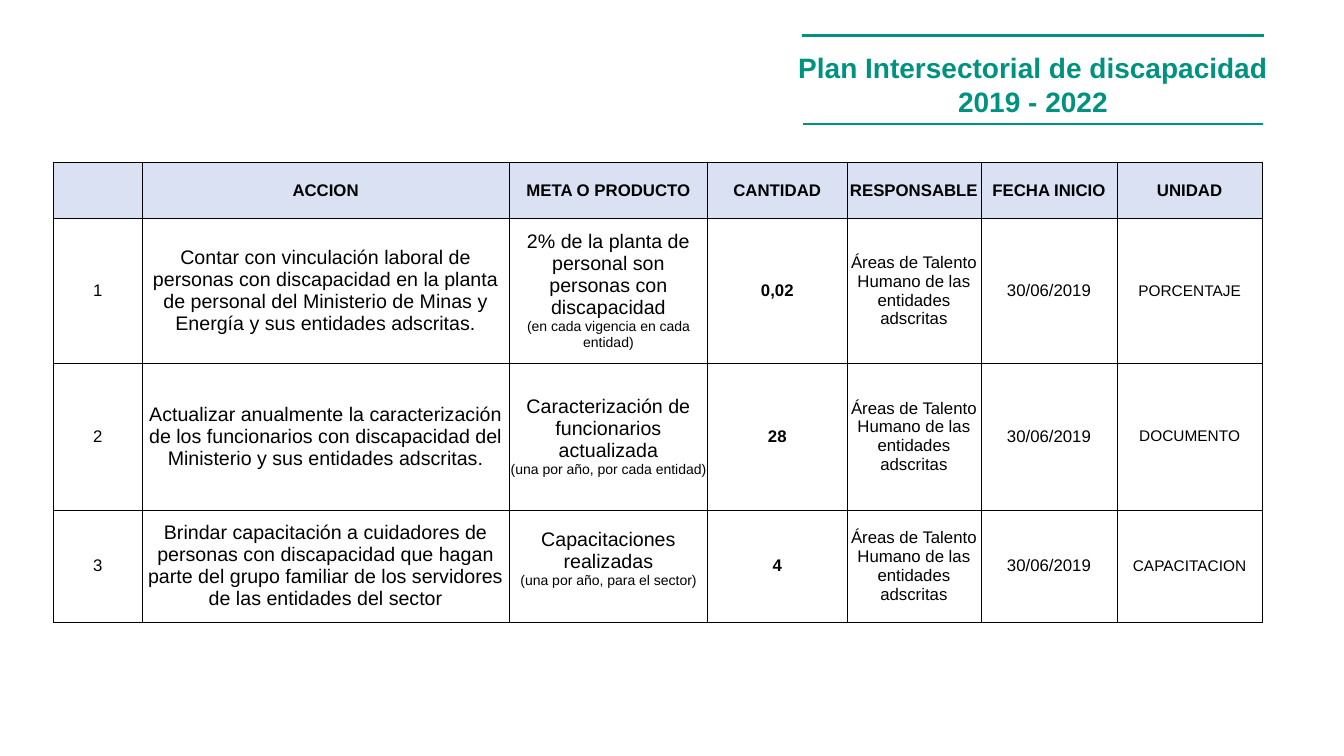
import pptx
import pptx.util
import pptx.dml.color
import pptx.enum.shapes
import pptx.enum.text
import pptx.oxml
import pptx.oxml.ns
from lxml import etree

COLORS = {"title": "009280", "header": "D9E1F2", "text": "000000"}
FONT = "Arial"
TITLE = ["Plan Intersectorial de discapacidad", "2019 - 2022"]
TITLE_BOX = (7.8, 0.45, 4.89, 0.77)
RULES = [(7.95, 12.54, 0.35), (7.96, 12.53, 1.23)]

HEADERS = ["", "ACCION", "META O PRODUCTO", "CANTIDAD", "RESPONSABLE", "FECHA INICIO", "UNIDAD"]
TEAM = "Áreas de Talento Humano de las entidades adscritas"
START = "30/06/2019"
ACTIONS = [
    ("Contar con vinculación laboral de personas con discapacidad en la planta de personal "
     "del Ministerio de Minas y Energía y sus entidades adscritas.",
     ["2% de la planta de personal son personas con discapacidad",
      "(en cada vigencia en cada entidad)"], "0,02", "PORCENTAJE"),
    ("Actualizar anualmente la caracterización de los funcionarios con discapacidad "
     "del Ministerio y sus entidades adscritas.",
     ["Caracterización de funcionarios actualizada",
      "(una por año, por cada entidad)"], "28", "DOCUMENTO"),
    ("Brindar capacitación a cuidadores de personas con discapacidad que hagan parte "
     "del grupo familiar de los servidores de las entidades del sector",
     ["Capacitaciones realizadas",
      "(una por año, para el sector)"], "4", "CAPACITACION"),
]
TABLE_LEFT, TABLE_TOP = 0.53, 1.61
COLS = [0.88, 3.64, 1.97, 1.38, 1.33, 1.35, 1.44]
ROWS = [0.56, 1.43, 1.46, 1.11]
SIZES = [[12], [14], [14, 10], [12], [12], [12], [11]]
QUANTITY_COL, GOAL_COL = 3, 2

inch = pptx.util.Inches


def rgb(name):
    return pptx.dml.color.RGBColor.from_string(COLORS[name])


def write(tf, lines, sizes, color="text", bold=False):
    for i, line in enumerate(lines):
        p = tf.paragraphs[0] if i == 0 else tf.add_paragraph()
        p.alignment = pptx.enum.text.PP_ALIGN.CENTER
        p.space_before = pptx.util.Pt(0)
        r = p.add_run()
        r.text = line
        r.font.name = FONT
        r.font.size = pptx.util.Pt(sizes[min(i, len(sizes) - 1)])
        r.font.bold = bold
        r.font.color.rgb = rgb(color)


def add_borders(cell, top_width):
    tc_pr = cell._tc.get_or_add_tcPr()
    for side, width in (("L", 0.5), ("R", 0.5), ("T", top_width), ("B", 0.5)):
        tc_pr.append(pptx.oxml.parse_xml(
            f'<a:ln{side} {pptx.oxml.ns.nsdecls("a")} w="{pptx.util.Pt(width)}">'
            f'<a:solidFill><a:srgbClr val="{COLORS["text"]}"/></a:solidFill></a:ln{side}>'))


def add_title(slide):
    sp = slide.shapes.title
    sp.left, sp.top, sp.width, sp.height = map(inch, TITLE_BOX)
    tf = sp.text_frame
    tf.word_wrap = False
    tf.auto_size = pptx.enum.text.MSO_AUTO_SIZE.NONE
    tf.vertical_anchor = pptx.enum.text.MSO_ANCHOR.MIDDLE
    write(tf, TITLE, [20], color="title", bold=True)
    for x1, x2, y in RULES:
        line = slide.shapes.add_connector(
            pptx.enum.shapes.MSO_CONNECTOR.STRAIGHT, inch(x1), inch(y), inch(x2), inch(y))
        line.line.color.rgb = rgb("title")
        line.line.width = pptx.util.Pt(2)
        etree.SubElement(line._element.spPr, pptx.oxml.ns.qn("a:effectLst"))


def add_plan(slide):
    table = slide.shapes.add_table(
        len(ROWS), len(COLS), inch(TABLE_LEFT), inch(TABLE_TOP),
        inch(sum(COLS)), inch(sum(ROWS))).table
    table.first_row = table.horz_banding = False
    for col, width in zip(table.columns, COLS):
        col.width = inch(width)
    for row, height in zip(table.rows, ROWS):
        row.height = inch(height)
    body = [[[str(n)], [action], goal, [quantity], [TEAM], [START], [unit]]
            for n, (action, goal, quantity, unit) in enumerate(ACTIONS, 1)]
    for i, values in enumerate([[[h] if h else [] for h in HEADERS]] + body):
        header = i == 0
        for j, lines in enumerate(values):
            cell = table.cell(i, j)
            cell.margin_left = cell.margin_right = cell.margin_top = cell.margin_bottom = 0
            cell.vertical_anchor = pptx.enum.text.MSO_ANCHOR.MIDDLE
            add_borders(cell, 1 if header else 0.5)
            if header:
                cell.fill.solid()
                cell.fill.fore_color.rgb = rgb("header")
            else:
                cell.fill.background()
            write(cell.text_frame, lines, [12] if header else SIZES[j],
                  bold=header or j == QUANTITY_COL)
    table.cell(len(ROWS) - 1, GOAL_COL).margin_bottom = inch(0.15)


def main():
    prs = pptx.Presentation()
    prs.slide_width, prs.slide_height = inch(13.33), inch(7.5)
    slide = prs.slides.add_slide(prs.slide_layouts.get_by_name("Title Only"))
    add_title(slide)
    add_plan(slide)
    prs.save("out.pptx")


if __name__ == "__main__":
    main()
